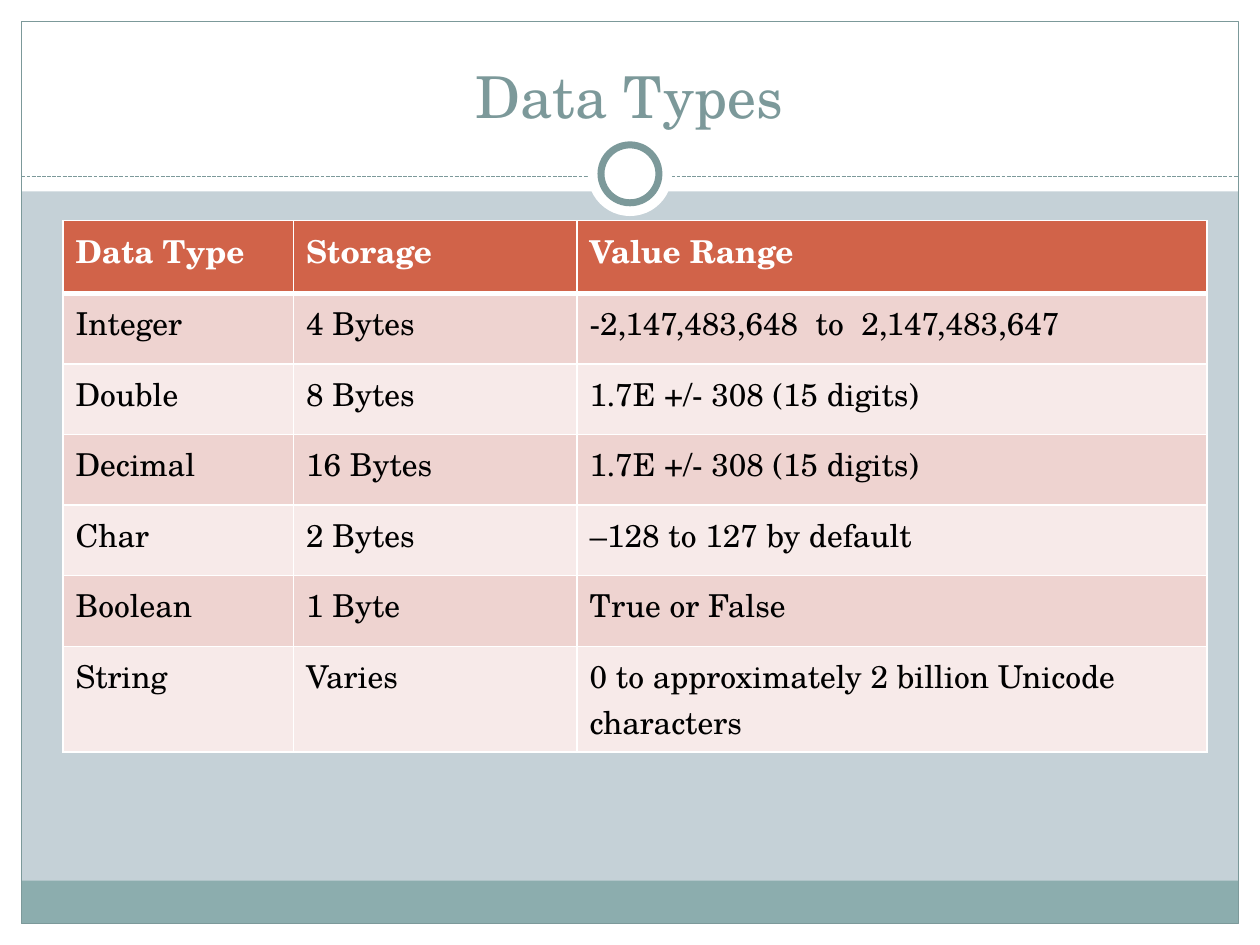
from dataclasses import dataclass
from typing import Optional

from lxml.etree import SubElement
from pptx import Presentation
from pptx.dml.color import RGBColor
from pptx.enum.dml import MSO_LINE
from pptx.enum.shapes import MSO_CONNECTOR, MSO_SHAPE
from pptx.enum.text import MSO_ANCHOR, PP_ALIGN
from pptx.oxml.ns import qn
from pptx.util import Inches, Pt


@dataclass(frozen=True)
class Theme:
    font: str = "TeX Gyre Schola"
    title_size: float = 33
    table_size: float = 18
    background: str = "C5D1D7"
    white: str = "FFFFFF"
    black: str = "000000"
    accent: str = "7C999A"
    footer: str = "8CADAE"
    header: str = "D16349"
    bands: tuple = ("EED3D0", "F7EAE9")
    thin_line: float = 0.75
    ring_line: float = 4
    cell_border: float = 1
    header_border: float = 3


THEME = Theme()


@dataclass(frozen=True)
class Panel:
    left: float
    top: float
    width: float
    height: float
    fill: Optional[str] = None
    line: Optional[str] = None
    line_width: float = THEME.thin_line
    kind: MSO_SHAPE = MSO_SHAPE.RECTANGLE


SLIDE_WIDTH, SLIDE_HEIGHT = 10, 7.5
MARGIN = 0.17
INNER_WIDTH = SLIDE_WIDTH - 2 * MARGIN
INNER_HEIGHT = SLIDE_HEIGHT - 2 * MARGIN
DIVIDER_TOP = 1.4
RING_CENTER = (5, 1.38)


def centered_circle(diameter: float, **style) -> Panel:
    left, top = (center - diameter / 2 for center in RING_CENTER)
    return Panel(left, top, diameter, diameter, THEME.white,
                 kind=MSO_SHAPE.OVAL, **style)


FRAME = [
    Panel(0, SLIDE_HEIGHT - MARGIN, SLIDE_WIDTH, MARGIN, THEME.white),
    Panel(0, 0, SLIDE_WIDTH, 1.52, THEME.white),
    Panel(0, 0, MARGIN, SLIDE_HEIGHT, THEME.white),
    Panel(SLIDE_WIDTH - MARGIN, 0, MARGIN, SLIDE_HEIGHT, THEME.white),
    Panel(MARGIN, 6.99, INNER_WIDTH, 0.34, THEME.footer),
    Panel(MARGIN, MARGIN, INNER_WIDTH, INNER_HEIGHT, line=THEME.accent),
]
RING = [
    centered_circle(0.67),
    centered_circle(0.46, line=THEME.accent, line_width=THEME.ring_line),
]

COLUMN_WIDTHS = [1.83, 2.25, 5]
ROW_HEIGHTS = [0.58] + [0.56] * 5 + [0.84]
ROWS = [
    ("Data Type", "Storage", "Value Range"),
    ("Integer", "4 Bytes", "-2,147,483,648  to  2,147,483,647"),
    ("Double", "8 Bytes", "1.7E +/- 308 (15 digits)"),
    ("Decimal", "16 Bytes", "1.7E +/- 308 (15 digits)"),
    ("Char", "2 Bytes", "–128 to 127 by default"),
    ("Boolean", "1 Byte", "True or False"),
    ("String", "Varies", "0 to approximately 2 billion Unicode characters"),
]


def color(value: str) -> RGBColor:
    return RGBColor.from_string(value)


def paint(fill, value: str) -> None:
    fill.solid()
    fill.fore_color.rgb = color(value)


def add_panel(slide, panel: Panel) -> None:
    shape = slide.shapes.add_shape(
        panel.kind, Inches(panel.left), Inches(panel.top),
        Inches(panel.width), Inches(panel.height))
    shape.shadow.inherit = False
    if panel.fill:
        paint(shape.fill, panel.fill)
    else:
        shape.fill.background()
    if panel.line:
        paint(shape.line.fill, panel.line)
        shape.line.width = Pt(panel.line_width)
    else:
        shape.line.fill.background()


def add_divider(slide) -> None:
    connector = slide.shapes.add_connector(
        MSO_CONNECTOR.STRAIGHT, Inches(MARGIN), Inches(DIVIDER_TOP),
        Inches(SLIDE_WIDTH - MARGIN), Inches(DIVIDER_TOP))
    paint(connector.line.fill, THEME.accent)
    connector.line.width = Pt(THEME.thin_line)
    connector.line.dash_style = MSO_LINE.SQUARE_DOT
    SubElement(connector._element.spPr, qn("a:effectLst"))


def write(paragraph, text: str, size: float, text_color: str,
          bold: bool = False) -> None:
    run = paragraph.add_run()
    run.text = text
    style = {"name": THEME.font, "size": Pt(size), "bold": bold}
    for attribute, value in style.items():
        setattr(run.font, attribute, value)
    run.font.color.rgb = color(text_color)


def add_title(slide, text: str) -> None:
    box = slide.shapes.add_textbox(
        Inches(0.33), Inches(0.25), Inches(9.33), Inches(0.83))
    box.text_frame.word_wrap = True
    box.text_frame.vertical_anchor = MSO_ANCHOR.BOTTOM
    paragraph = box.text_frame.paragraphs[0]
    paragraph.alignment = PP_ALIGN.CENTER
    write(paragraph, text, THEME.title_size, THEME.accent)


def set_borders(cell, top: float, bottom: float) -> None:
    """Draw white cell borders; call before filling, as XML order matters."""
    properties = cell._tc.get_or_add_tcPr()
    side = THEME.cell_border
    for tag, width in {"lnL": side, "lnR": side,
                       "lnT": top, "lnB": bottom}.items():
        line = SubElement(properties, qn(f"a:{tag}"), w=str(Pt(width)))
        fill = SubElement(line, qn("a:solidFill"))
        SubElement(fill, qn("a:srgbClr"), val=THEME.white)


def add_data_table(slide) -> None:
    table = slide.shapes.add_table(
        len(ROWS), len(COLUMN_WIDTHS), Inches(0.5), Inches(1.75),
        Inches(sum(COLUMN_WIDTHS)), Inches(sum(ROW_HEIGHTS))).table
    for column, width in zip(table.columns, COLUMN_WIDTHS):
        column.width = Inches(width)
    for index, (row, height, texts) in enumerate(
            zip(table.rows, ROW_HEIGHTS, ROWS)):
        row.height = Inches(height)
        is_header = index == 0
        top = THEME.header_border if index == 1 else THEME.cell_border
        bottom = THEME.header_border if is_header else THEME.cell_border
        fill = THEME.header if is_header else THEME.bands[(index - 1) % 2]
        text_color = THEME.white if is_header else THEME.black
        for cell, text in zip(row.cells, texts):
            set_borders(cell, top, bottom)
            paint(cell.fill, fill)
            write(cell.text_frame.paragraphs[0], text, THEME.table_size,
                  text_color, is_header)


def main() -> None:
    presentation = Presentation()
    presentation.slide_width = Inches(SLIDE_WIDTH)
    presentation.slide_height = Inches(SLIDE_HEIGHT)
    slide = presentation.slides.add_slide(presentation.slide_layouts[6])
    paint(slide.background.fill, THEME.background)
    for panel in FRAME:
        add_panel(slide, panel)
    add_divider(slide)
    for circle in RING:
        add_panel(slide, circle)
    add_title(slide, "Data Types")
    add_data_table(slide)
    presentation.save("out.pptx")


if __name__ == "__main__":
    main()
